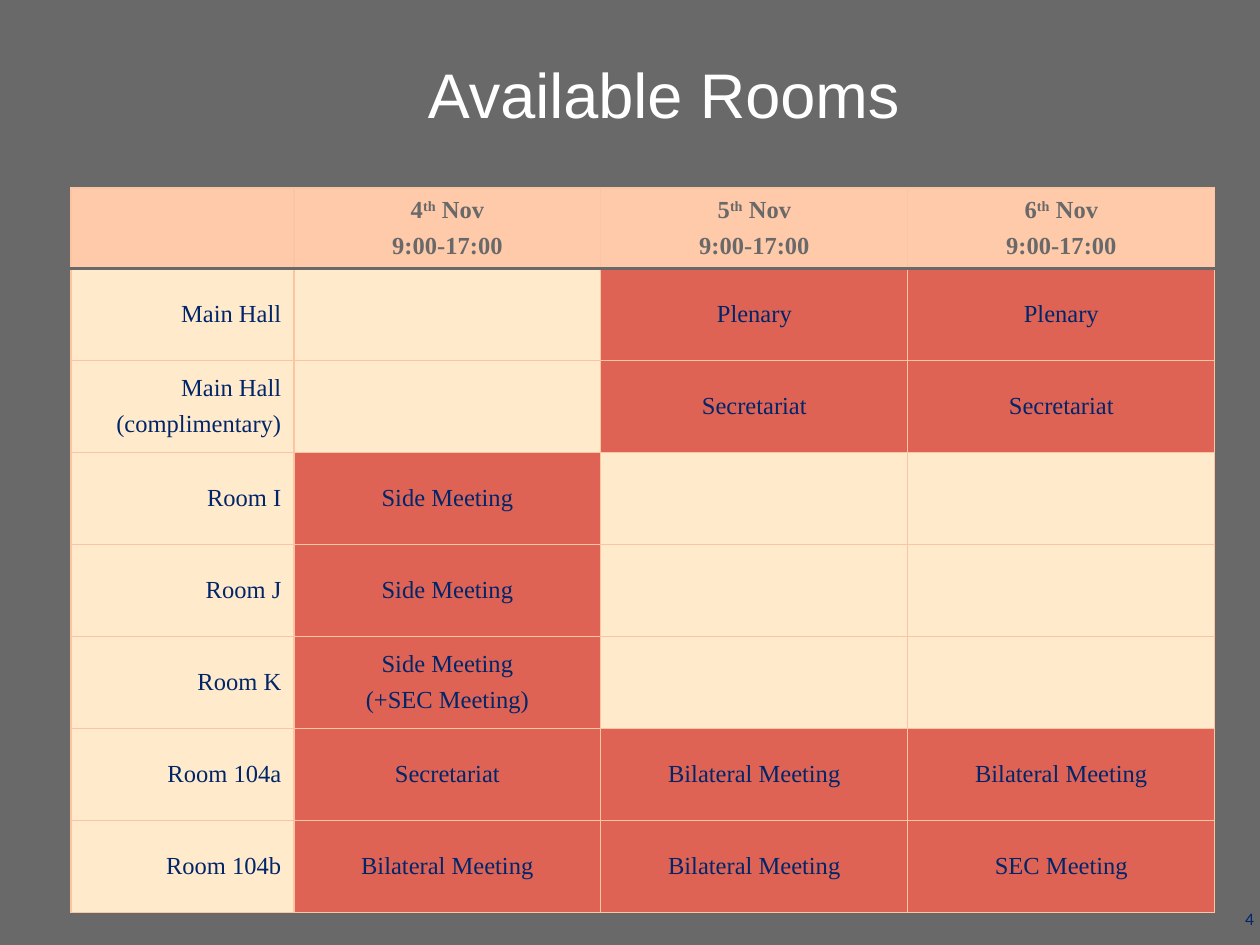
from lxml import etree
from pptx import Presentation
from pptx.dml.color import RGBColor
from pptx.enum.text import MSO_ANCHOR, PP_ALIGN
from pptx.oxml.ns import qn
from pptx.util import Pt

EMU_PER_PX = 914400 / 126
LEFT, CENTER, RIGHT = PP_ALIGN.LEFT, PP_ALIGN.CENTER, PP_ALIGN.RIGHT
TOP, MIDDLE = MSO_ANCHOR.TOP, MSO_ANCHOR.MIDDLE

GRAY, NAVY, WHITE = "696969", "002569", "FFFFFF"
PEACH, CREAM, RED, BORDER = "FFCAAA", "FFEBCC", "DE6355", "FBC5A4"

COLUMN_WIDTHS = [223, 307, 307, 307]
HEADER_HEIGHT, ROW_HEIGHT = 78, 92
DAYS = ["4", "5", "6"]
HOURS = "9:00-17:00"
ROOMS = [
    ("Main Hall", "", "Plenary", "Plenary"),
    ("Main Hall\n(complimentary)", "", "Secretariat", "Secretariat"),
    ("Room I", "Side Meeting", "", ""),
    ("Room J", "Side Meeting", "", ""),
    ("Room K", "Side Meeting\n(+SEC Meeting)", "", ""),
    ("Room 104a", "Secretariat", "Bilateral Meeting", "Bilateral Meeting"),
    ("Room 104b", "Bilateral Meeting", "Bilateral Meeting", "SEC Meeting"),
]


def px(length):
    return round(length * EMU_PER_PX)


def color(hex_string):
    return RGBColor.from_string(hex_string)


def write_text(frame, text, *, size=14, font="Times New Roman", fill=NAVY,
               bold=False, align=LEFT, space=0):
    """Write one paragraph per line; text between ^ marks is superscript."""
    for index, line in enumerate(text.split("\n")):
        paragraph = frame.paragraphs[0] if index == 0 else frame.add_paragraph()
        paragraph.alignment = align
        paragraph.space_before = Pt(space if index else 0)
        for part, piece in enumerate(line.split("^")):
            run = paragraph.add_run()
            run.text = piece
            run.font.size, run.font.name, run.font.bold = Pt(size), font, bold
            run.font.color.rgb = color(fill)
            if part % 2:
                run.font._element.set("baseline", "30000")


def set_border(cell, side, hex_string, width):
    line = etree.Element(qn(f"a:ln{side}"), w=str(Pt(width)))
    solid = etree.SubElement(line, qn("a:solidFill"))
    etree.SubElement(solid, qn("a:srgbClr"), val=hex_string)
    return line


def format_cell(cell, fill, edges):
    """Fill the cell and draw its edges, given as side: (colour, width)."""
    cell.vertical_anchor = MIDDLE
    cell.fill.solid()
    cell.fill.fore_color.rgb = color(fill)
    properties = cell._tc.get_or_add_tcPr()
    for position, side in enumerate("LRTB"):
        line = set_border(cell, side, *edges.get(side, (BORDER, 0.75)))
        properties.insert(position, line)


def add_title(slide, left, top, width, height):
    title = slide.shapes.title
    title.left, title.top, title.width, title.height = map(
        px, (left, top, width, height))
    frame = title.text_frame
    frame.vertical_anchor = TOP
    frame.margin_left, frame.margin_top = px(26), px(13)
    frame.margin_bottom = 0
    write_text(frame, "Available Rooms", size=36, font="Arial", fill=WHITE,
               align=CENTER)


def add_room_table(slide, left, top):
    height = HEADER_HEIGHT + ROW_HEIGHT * len(ROOMS)
    table = slide.shapes.add_table(
        len(ROOMS) + 1, len(COLUMN_WIDTHS), px(left), px(top),
        px(sum(COLUMN_WIDTHS)), px(height)).table
    for column, width in zip(table.columns, COLUMN_WIDTHS):
        column.width = px(width)

    header = ["", *(f"{day}^th^ Nov\n{HOURS}" for day in DAYS)]
    for row_index, texts in enumerate([header, *ROOMS]):
        is_header = row_index == 0
        table.rows[row_index].height = px(HEADER_HEIGHT if is_header else ROW_HEIGHT)
        edges = {0: {"B": (GRAY, 2)}, 1: {"T": (GRAY, 2)}}.get(row_index, {})
        for column_index, text in enumerate(texts):
            cell = table.cell(row_index, column_index)
            is_booked = column_index > 0 and text
            fill = PEACH if is_header else RED if is_booked else CREAM
            format_cell(cell, fill, edges)
            if text:
                write_text(cell.text_frame, text, bold=is_header, space=5.2,
                           fill=GRAY if is_header else NAVY,
                           align=CENTER if column_index else RIGHT)


def add_page_number(slide, left, top, width, height):
    box = slide.shapes.add_textbox(px(left), px(top), px(width), px(height))
    frame = box.text_frame
    frame.word_wrap = True
    frame.margin_left = frame.margin_right = px(6)
    frame.margin_top = frame.margin_bottom = px(6)
    write_text(frame, "4", size=10, font="Calibri", align=RIGHT)


def main():
    presentation = Presentation()
    presentation.slide_width, presentation.slide_height = px(1260), px(945)
    slide = presentation.slides.add_slide(presentation.slide_layouts[5])
    slide.background.fill.solid()
    slide.background.fill.fore_color.rgb = color(GRAY)

    add_page_number(slide, 998, 902, 262, 35)
    add_title(slide, 94, 42, 1126, 75)
    add_room_table(slide, 71, 188)
    presentation.save("out.pptx")


if __name__ == "__main__":
    main()
